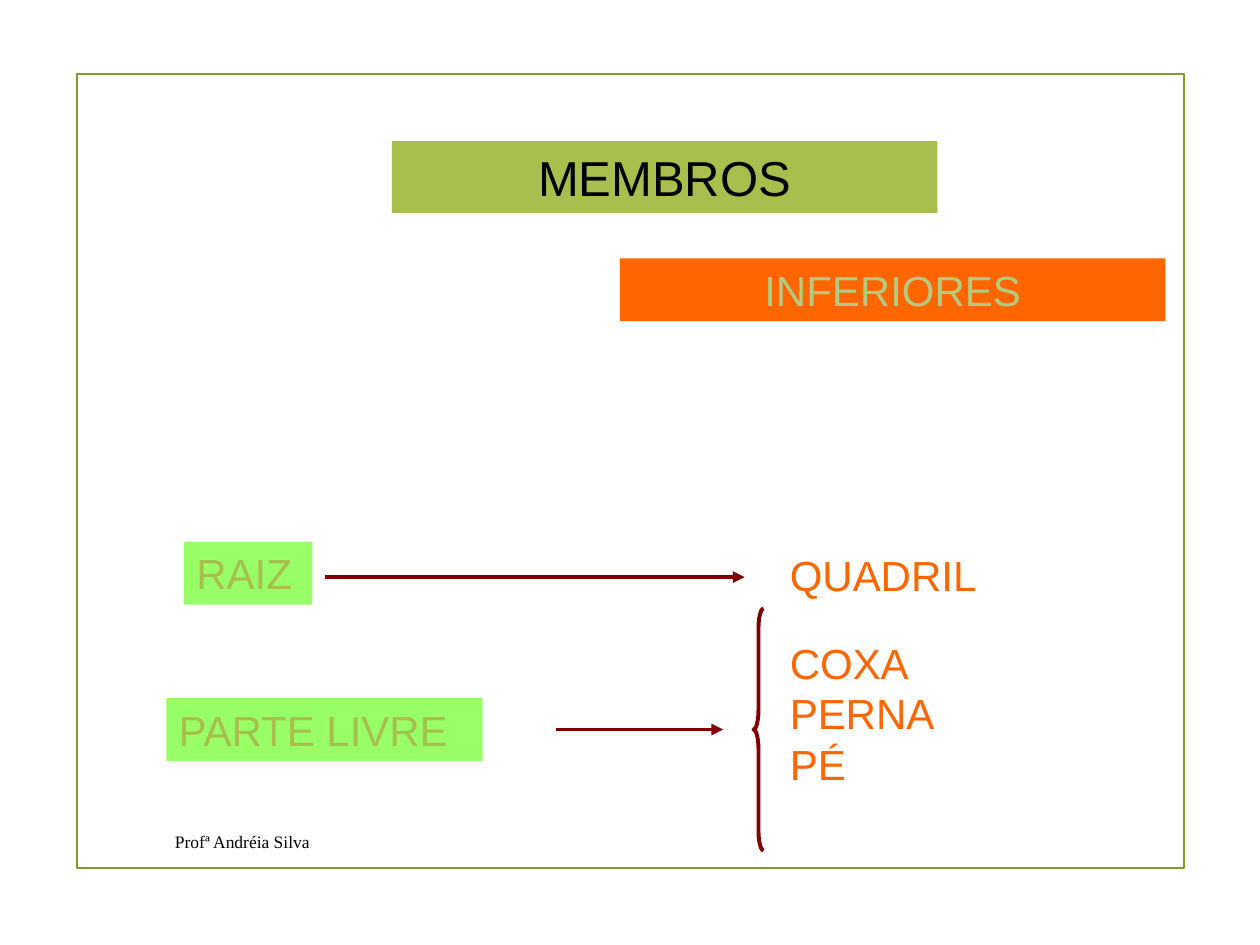
from dataclasses import dataclass

from lxml import etree
from pptx import Presentation
from pptx.dml.color import RGBColor
from pptx.enum.shapes import MSO_CONNECTOR as Connector, MSO_SHAPE as Preset
from pptx.enum.text import MSO_ANCHOR as Anchor, PP_ALIGN as Align
from pptx.oxml.ns import qn
from pptx.util import Inches, Pt


@dataclass(frozen=True)
class Theme:
    sans: str = "Arial"
    serif: str = "Times New Roman"
    frame: str = "83992A"
    olive: str = "A8BF4D"
    pale_olive: str = "B4CA80"
    orange: str = "FF6600"
    lime: str = "99FF66"
    maroon: str = "800000"
    black: str = "000000"
    title_size: int = 28
    body_size: int = 24
    credit_size: int = 10
    frame_width: float = 1.25
    stroke_width: float = 2.25


THEME = Theme()


def rgb(color):
    return RGBColor.from_string(color)


def inches(box):
    return [Inches(length) for length in box]


def place(shape, box):
    shape.left, shape.top, shape.width, shape.height = inches(box)


def write(shape, lines, color, size=THEME.body_size, font=THEME.sans,
          align=Align.LEFT, anchor=Anchor.TOP):
    frame = shape.text_frame
    frame.word_wrap = True
    frame.vertical_anchor = anchor
    for index, line in enumerate(lines):
        paragraph = frame.add_paragraph() if index else frame.paragraphs[0]
        paragraph.alignment = align
        run = paragraph.add_run()
        run.text = line
        run.font.name = font
        run.font.size = Pt(size)
        run.font.color.rgb = rgb(color)


def add_outline(slide, preset, box, color, width):
    shape = slide.shapes.add_shape(preset, *inches(box))
    shape.shadow.inherit = False
    shape.fill.background()
    shape.line.color.rgb = rgb(color)
    shape.line.width = Pt(width)
    return shape


def add_label(slide, box, text, fill, color, align=Align.LEFT):
    shape = slide.shapes.add_shape(Preset.RECTANGLE, *inches(box))
    shape.shadow.inherit = False
    shape.fill.solid()
    shape.fill.fore_color.rgb = rgb(fill)
    shape.line.fill.background()
    write(shape, [text], color, align=align)


def add_text(slide, box, lines, color, **style):
    write(slide.shapes.add_textbox(*inches(box)), lines, color, **style)


def add_arrow(slide, left, right, y):
    arrow = slide.shapes.add_connector(
        Connector.STRAIGHT, *inches((left, y, right, y)))
    arrow.line.color.rgb = rgb(THEME.maroon)
    arrow.line.width = Pt(THEME.stroke_width)
    line = arrow.line._get_or_add_ln()
    etree.SubElement(line, qn("a:tailEnd"), type="triangle")
    etree.SubElement(arrow._element.spPr, qn("a:effectLst"))


def add_heading(slide, box):
    """Title bar with the subtitle bar stepped down to its right."""
    left, top, width, height = box
    title = slide.shapes.title
    place(title, (left, top, width, height))
    title.fill.solid()
    title.fill.fore_color.rgb = rgb(THEME.olive)
    write(title, ["MEMBROS"], THEME.black, THEME.title_size,
          align=Align.CENTER, anchor=Anchor.MIDDLE)
    add_label(slide, (left + 1.81, top + 0.93, width, 0.5), "INFERIORES",
              THEME.orange, THEME.pale_olive, Align.CENTER)


def add_root_row(slide, box):
    """Limb root, pointing to the hip."""
    left, top, width, height = box
    add_label(slide, (left, top, 1.02, height), "RAIZ", THEME.lime, THEME.olive)
    add_arrow(slide, left + 1.12, left + 4.45, top + 0.28)
    add_text(slide, (left + width - 1.83, top + 0.01, 1.83, height),
             ["QUADRIL"], THEME.orange)


def add_free_part_row(slide, box):
    """Free part, pointing to its braced list of segments."""
    left, top, width, height = box
    middle = top + height / 2
    add_label(slide, (left, middle - 0.25, 2.51, 0.5), "PARTE LIVRE",
              THEME.lime, THEME.olive)
    add_arrow(slide, left + 3.09, left + 4.42, middle)
    brace = add_outline(slide, Preset.LEFT_BRACE, (left + 4.66, top, 0.08, height),
                        THEME.maroon, THEME.stroke_width)
    brace.adjustments[0] = 1.92
    brace.adjustments[1] = 0.5
    add_text(slide, (left + width - 1.67, top + 0.18, 1.67, 1.31),
             ["COXA", "PERNA", "PÉ"], THEME.orange)


def main():
    presentation = Presentation()
    presentation.slide_width, presentation.slide_height = inches((10, 7.5))
    slide = presentation.slides.add_slide(presentation.slide_layouts[5])

    # Page frame
    add_outline(slide, Preset.RECTANGLE, (0.61, 0.59, 8.79, 6.3),
                THEME.frame, THEME.frame_width)
    # Content
    add_heading(slide, (3.11, 1.12, 4.33, 0.57))
    add_root_row(slide, (1.46, 4.3, 6.54, 0.5))
    add_free_part_row(slide, (1.32, 4.83, 6.52, 1.92))
    # Credit line
    add_text(slide, (1.29, 6.52, 5.58, 0.31), ["Profª Andréia Silva"], THEME.black,
             size=THEME.credit_size, font=THEME.serif, anchor=Anchor.MIDDLE)

    presentation.save("out.pptx")


if __name__ == "__main__":
    main()
